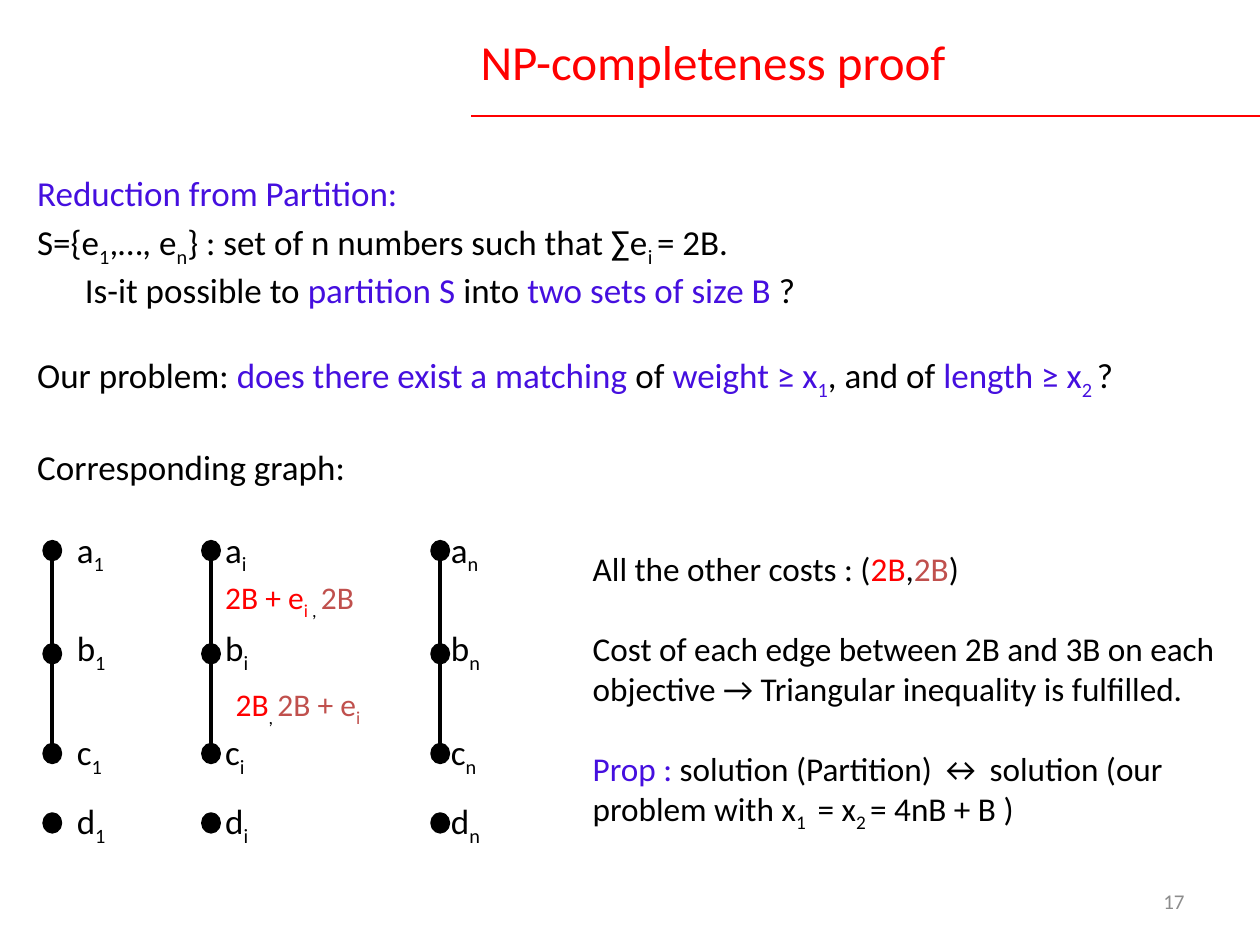
from lxml import etree
from pptx import Presentation
from pptx.dml.color import RGBColor
from pptx.enum.shapes import MSO_CONNECTOR, MSO_SHAPE
from pptx.enum.text import MSO_ANCHOR, MSO_AUTO_SIZE, PP_ALIGN
from pptx.oxml.ns import qn
from pptx.util import Cm, Pt

STRAIGHT = MSO_CONNECTOR.STRAIGHT
DOT = MSO_SHAPE.FLOWCHART_CONNECTOR
MIDDLE, TOP = MSO_ANCHOR.MIDDLE, MSO_ANCHOR.TOP
GROW = MSO_AUTO_SIZE.SHAPE_TO_FIT_TEXT
CENTER, RIGHT = PP_ALIGN.CENTER, PP_ALIGN.RIGHT

FONT = "Calibri"
BLACK, RED, VIOLET, BRICK, GREY = "000000", "FF0000", "450FDF", "C0504D", "8C8C8C"

REDUCTION = [
    [("Reduction from Partition:", VIOLET)],
    [("S={e~1~,…, e~n~} : set of n numbers such that ∑e~i ~= 2B.", BLACK),
     ("\vIs-it possible to ", BLACK), ("partition S ", VIOLET), ("into ", BLACK),
     ("two sets of size B ", VIOLET), ("?", BLACK)],
    [("Our problem: ", BLACK), ("does there exist a matching ", VIOLET), ("of ", BLACK),
     ("weight ≥ x~1~", VIOLET), (", and of ", BLACK), ("length ≥ x~2 ~", VIOLET), ("?", BLACK)],
    [("Corresponding graph:", BLACK)],
]
REMARKS = [
    [("All the other costs : (", BLACK), ("2B", RED), (",", BLACK), ("2B", BRICK), (")", BLACK)],
    [("Cost of each edge between 2B and 3B on each objective → "
      "Triangular inequality is fulfilled.", BLACK)],
    [("Prop : ", VIOLET),
     ("solution (Partition) ↔ solution (our problem with x~1 ~ = x~2 ~= 4nB + B )", BLACK)],
]
UPPER_COST = [("2B + e~i ~", RED), ("~, ~", BLACK), ("2B", BRICK)]
LOWER_COST = [("2B", RED), ("~, ~", BLACK), ("2B + e~i~", BRICK)]


def color(value):
    """Turn a hex string into a colour."""
    return RGBColor.from_string(value)


def write(paragraph, pieces, size):
    """Write coloured pieces, with subscripts between tildes and \\v as a line break."""
    for text, hue in pieces:
        if text.startswith("\v"):
            paragraph.add_line_break()
        for index, part in enumerate(text.lstrip("\v").split("~")):
            if not part:
                continue
            run = paragraph.add_run()
            run.text = part
            run.font.name = FONT
            run.font.size = Pt(size)
            run.font.color.rgb = color(hue)
            if index % 2:
                run.font._element.set("baseline", "-25000")


def add_text(slide, left, top, width, height, paragraphs, size, anchor=TOP, wrap=True):
    """Add a text box and return its text frame."""
    frame = slide.shapes.add_textbox(Cm(left), Cm(top), Cm(width), Cm(height)).text_frame
    frame.word_wrap = wrap
    frame.vertical_anchor = anchor
    for index, pieces in enumerate(paragraphs):
        paragraph = frame.add_paragraph() if index else frame.paragraphs[0]
        write(paragraph, pieces, size)
    return frame


def add_line(slide, x1, y1, x2, y2, hue, weight):
    """Add a straight line without a shadow."""
    line = slide.shapes.add_connector(STRAIGHT, Cm(x1), Cm(y1), Cm(x2), Cm(y2))
    line.line.color.rgb = color(hue)
    line.line.width = Pt(weight)
    etree.SubElement(line._element.spPr, qn("a:effectLst"))


def add_title(slide, left, top, width, height):
    """Add the title, shifted right of centre, and the rule below it."""
    frame = add_text(slide, left, top, width, height,
                     [[("NP-completeness proof", RED)]], 28, MIDDLE)
    frame.margin_left = Cm(3.6)
    frame.paragraphs[0].alignment = CENTER
    rule_y = top + height - 0.18
    add_line(slide, left + 8.23, rule_y, 25.4, rule_y, RED, 1.25)


def add_reduction(slide, left, top, width, height):
    """Add the statement of the reduction with hanging indents."""
    frame = add_text(slide, left, top, width, height, REDUCTION, 20)
    for paragraph, gap in zip(frame.paragraphs, (4, 4, 25, 25)):
        paragraph.space_before = Pt(gap)
        properties = paragraph._p.get_or_add_pPr()
        properties.set("marL", str(Cm(0.96)))
        properties.set("indent", str(-Cm(0.96)))


def add_graph(slide, left, top):
    """Add three columns of labelled vertices, their edges and the edge costs."""
    dot_width, dot_height = 0.33, 0.36
    columns = [("1", 0, 0.41), ("i", 3.2, 0.2), ("n", 7.82, 0.13)]
    rows = [("a", 0.4, 0), ("b", 2.48, 1.98), ("c", 4.49, 4.08), ("d", 5.89, 5.48)]
    for subscript, dot_x, label_shift in columns:
        for letter, dot_y, label_y in rows:
            vertex = slide.shapes.add_shape(DOT, Cm(left + dot_x), Cm(top + dot_y),
                                            Cm(dot_width), Cm(dot_height))
            vertex.shadow.inherit = False
            vertex.fill.solid()
            vertex.fill.fore_color.rgb = color(BLACK)
            vertex.line.color.rgb = color(BLACK)
            vertex.line.width = Pt(2)
            add_text(slide, left + dot_x + label_shift, top + label_y, 1.75, 1.12,
                     [[(f"{letter}~{subscript}~", BLACK)]], 20)
        edge_x = left + dot_x + dot_width / 2
        for upper, lower in zip(rows[:2], rows[1:3]):
            add_line(slide, edge_x, top + upper[1] + dot_height / 2,
                     edge_x, top + lower[1] + dot_height / 2, BLACK, 2.25)
    for cost, x, y, width in ((UPPER_COST, 3.4, 1.01, 3.2), (LOWER_COST, 3.61, 3.17, 3.43)):
        frame = add_text(slide, left + x, top + y, width, 1.02, [cost], 18, wrap=False)
        frame.auto_size = GROW


def add_remarks(slide, left, top, width, height):
    """Add the remarks on costs and the proposition."""
    frame = add_text(slide, left, top, width, height, REMARKS, 19)
    for paragraph in frame.paragraphs[1:]:
        paragraph.space_before = Pt(23)


def add_page_number(slide, left, top, width, height):
    """Add the page number at the right of its box."""
    frame = add_text(slide, left, top, width, height, [[("17", GREY)]], 12, MIDDLE)
    frame.paragraphs[0].alignment = RIGHT


def main():
    """Build and save the slide."""
    deck = Presentation()
    deck.slide_width, deck.slide_height = Cm(25.4), Cm(19.05)
    slide = deck.slides.add_slide(deck.slide_layouts[6])
    add_title(slide, 1.27, -0.08, 22.86, 2.6)
    add_reduction(slide, 0.5, 3.33, 24.6, 15.32)
    add_graph(slide, 0.89, 10.52)
    add_remarks(slide, 11.7, 10.92, 13.7, 5.94)
    add_page_number(slide, 18.2, 17.65, 5.93, 1.02)
    deck.save("out.pptx")


if __name__ == "__main__":
    main()
